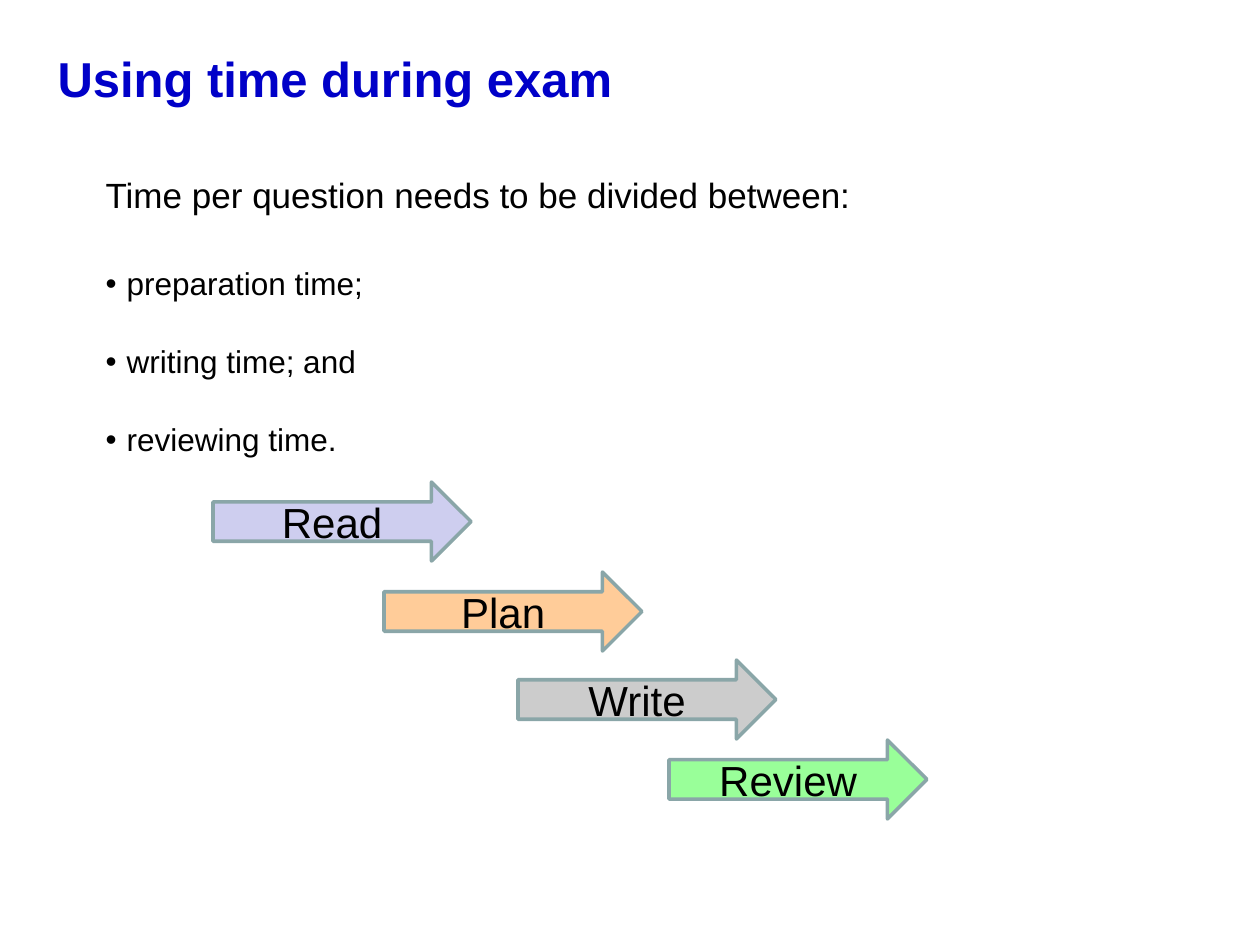
"""Build a slide on dividing exam time, with four staggered step arrows."""
from dataclasses import dataclass

from lxml import etree
from pptx import Presentation
from pptx.dml.color import RGBColor
from pptx.enum.shapes import MSO_SHAPE
from pptx.enum.text import MSO_ANCHOR, MSO_AUTO_SIZE, PP_ALIGN
from pptx.oxml.ns import qn
from pptx.util import Inches, Pt

ARROW = MSO_SHAPE.RIGHT_ARROW
TOP, MIDDLE = MSO_ANCHOR.TOP, MSO_ANCHOR.MIDDLE
LEFT, CENTER = PP_ALIGN.LEFT, PP_ALIGN.CENTER
NO_FIT = MSO_AUTO_SIZE.NONE
PX_PER_INCH = 126
ARROW_W, ARROW_H = 258, 79
BULLET_INDENT = 21
FONT = "Arial"
COLORS = {
    "title": "0000C8",
    "text": "000000",
    "outline": "8AA6A8",
    "lavender": "CECEEF",
    "orange": "FFCC99",
    "gray": "CCCCCC",
    "green": "99FF99",
}


@dataclass
class Step:
    label: str
    x: int
    y: int
    fill: str


@dataclass
class Line:
    text: str
    size: int
    before: int
    bullet: bool = True


STEPS = [
    Step("Read", 213, 482, "lavender"),
    Step("Plan", 384, 572, "orange"),
    Step("Write", 518, 660, "gray"),
    Step("Review", 669, 740, "green"),
]
LINES = [
    Line("Time per question needs to be divided between:", 20, 0, False),
    Line("preparation time;", 18, 28),
    Line("writing time; and", 18, 23),
    Line("reviewing time.", 18, 23),
]


def px(n: int) -> int:
    return round(Inches(n / PX_PER_INCH))


def rgb(name: str) -> RGBColor:
    return RGBColor.from_string(COLORS[name])


def place(sp, x: int, y: int, w: int, h: int) -> None:
    sp.left, sp.top, sp.width, sp.height = px(x), px(y), px(w), px(h)


def style(p, size: int, color: str = "text", bold: bool = False, align=LEFT) -> None:
    p.alignment = align
    for r in p.runs:
        r.font.name = FONT
        r.font.size = Pt(size)
        r.font.bold = bold
        r.font.color.rgb = rgb(color)


def set_bullet(p, shown: bool) -> None:
    pPr = p._p.get_or_add_pPr()
    indent = px(BULLET_INDENT) if shown else 0
    pPr.set("marL", str(indent))
    pPr.set("indent", str(-indent))
    if shown:
        etree.SubElement(pPr, qn("a:buFont"), typeface=FONT)
        etree.SubElement(pPr, qn("a:buChar"), char="•")
    else:
        etree.SubElement(pPr, qn("a:buNone"))


def fill_title(sp) -> None:
    place(sp, 45, 37, 1186, 92)
    tf = sp.text_frame
    tf.text = "Using time during exam"
    tf.auto_size = NO_FIT
    tf.vertical_anchor = TOP
    tf.margin_top = px(11)
    style(tf.paragraphs[0], 28, "title", bold=True)


def fill_body(sp, lines: list[Line]) -> None:
    place(sp, 93, 167, 1125, 437)
    tf = sp.text_frame
    tf.text = "\n".join(line.text for line in lines)
    tf.auto_size = NO_FIT
    tf.vertical_anchor = TOP
    for p, line in zip(tf.paragraphs, lines):
        set_bullet(p, line.bullet)
        p.space_before = Pt(line.before)
        style(p, line.size)


def add_step(slide, step: Step) -> None:
    sp = slide.shapes.add_shape(ARROW, px(step.x), px(step.y), px(ARROW_W), px(ARROW_H))
    sp.shadow.inherit = False
    sp.fill.solid()
    sp.fill.fore_color.rgb = rgb(step.fill)
    sp.line.color.rgb = rgb("outline")
    sp.line.width = Pt(2)
    tf = sp.text_frame
    tf.text = step.label
    tf.vertical_anchor = MIDDLE
    style(tf.paragraphs[0], 24, align=CENTER)


def main() -> None:
    prs = Presentation()
    prs.slide_width, prs.slide_height = Inches(10), Inches(7.5)
    slide = prs.slides.add_slide(prs.slide_layouts[1])
    fill_title(slide.shapes.title)
    fill_body(slide.placeholders[1], LINES)
    for step in STEPS:
        add_step(slide, step)
    prs.save("out.pptx")


if __name__ == "__main__":
    main()
